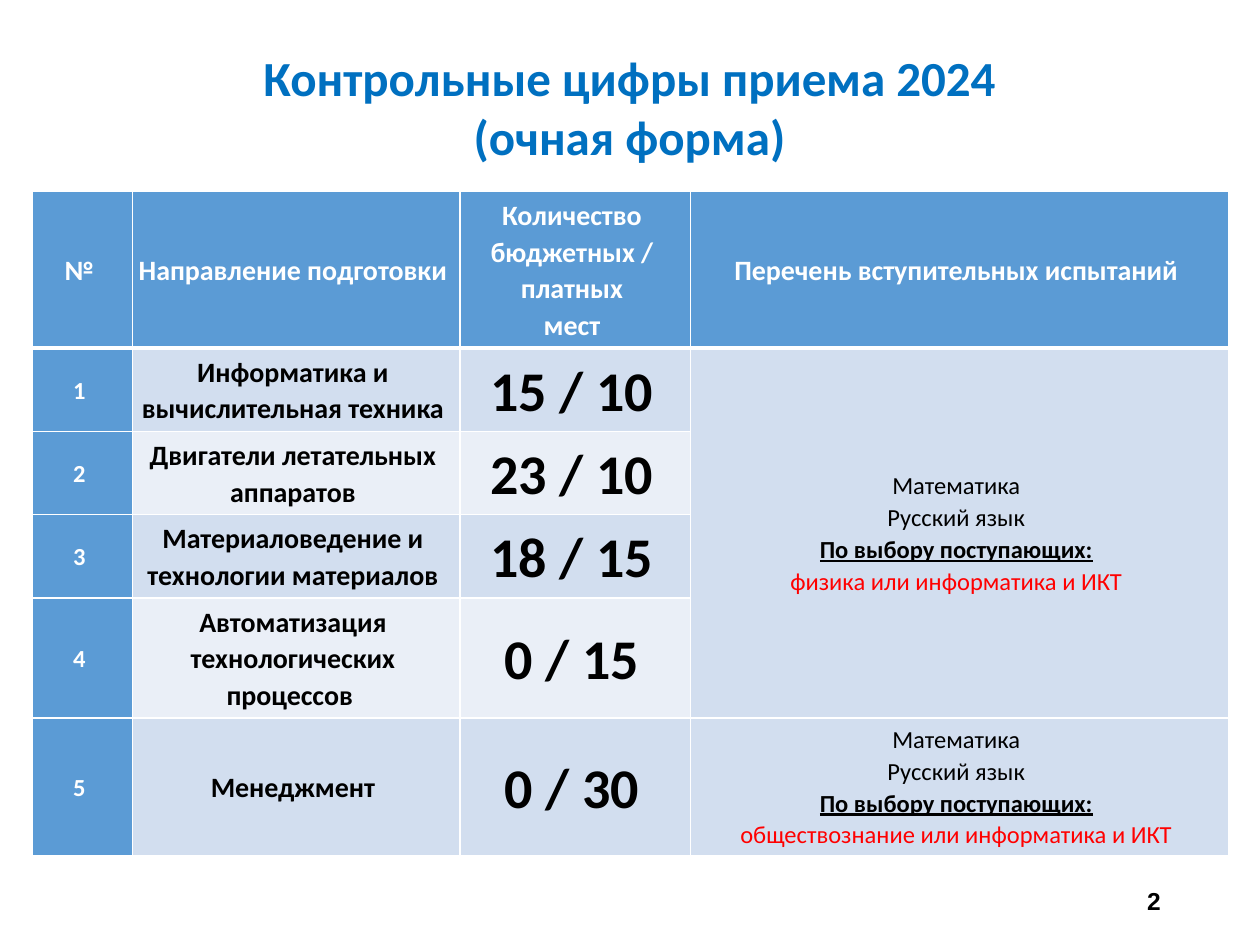
from dataclasses import dataclass

from lxml import etree
from pptx import Presentation
from pptx.dml.color import RGBColor
from pptx.enum import text
from pptx.oxml import ns
from pptx.util import Inches, Pt


@dataclass(frozen=True)
class Theme:
    font: str = "Calibri"
    number_font: str = "Arial"
    title: str = "0070C0"
    header: str = "5B9BD5"
    bands: tuple = ("D2DEEF", "EAEFF7")
    white: str = "FFFFFF"
    black: str = "000000"
    accent: str = "FF0000"
    title_size: int = 28
    label_size: int = 16
    small_size: int = 14
    seats_size: int = 32


THEME = Theme()
CENTER = text.PP_ALIGN.CENTER

COLUMNS = (0.79, 2.6, 1.83, 4.27)
ROWS = (1.21, 0.66, 0.65, 0.65, 0.94, 1.08)
HEADER = (
    ["№"],
    ["Направление подготовки"],
    ["Количество бюджетных / платных", "мест"],
    ["Перечень вступительных испытаний"],
)
PROGRAMMES = (
    ("Информатика и вычислительная техника", "15 / 10"),
    ("Двигатели летательных аппаратов", "23 / 10"),
    ("Материаловедение и технологии материалов", "18 / 15"),
    ("Автоматизация технологических процессов ", "0 / 15"),
    ("Менеджмент", "0 / 30"),
)
# (first row, last row, subjects to choose from)
EXAMS = (
    (1, 4, "физика или информатика и ИКТ"),
    (5, 5, "обществознание или информатика и ИКТ"),
)


def add_run(p, words, size, color, bold=True, underline=False, font=THEME.font):
    r = p.add_run()
    r.text = words
    r.font.name = font
    r.font.size = Pt(size)
    r.font.bold = bold
    r.font.underline = underline
    r.font.color.rgb = RGBColor.from_string(color)


def paragraphs(tf, count):
    """Yield count paragraphs, starting with the one already there."""
    for i in range(count):
        yield tf.add_paragraph() if i else tf.paragraphs[0]


def add_title(slide, left, top, width, height):
    sp = slide.shapes.title
    sp.left, sp.top, sp.width, sp.height = left, top, width, height
    tf = sp.text_frame
    tf.auto_size = text.MSO_AUTO_SIZE.NONE
    tf.vertical_anchor = text.MSO_ANCHOR.TOP
    lines = ("Контрольные цифры приема 2024", "(очная форма)")
    for p, line in zip(paragraphs(tf, len(lines)), lines):
        p.alignment = CENTER
        add_run(p, line, THEME.title_size, THEME.title)


def set_borders(cell, bottom):
    tc_pr = cell._tc.get_or_add_tcPr()
    for side, width in (("L", 1), ("R", 1), ("T", 1), ("B", bottom)):
        ln = etree.SubElement(tc_pr, ns.qn(f"a:ln{side}"), w=str(Pt(width)))
        fill = etree.SubElement(ln, ns.qn("a:solidFill"))
        etree.SubElement(fill, ns.qn("a:srgbClr"), val=THEME.white)


def format_cell(cell, fill, bottom=1):
    set_borders(cell, bottom)
    cell.fill.solid()
    cell.fill.fore_color.rgb = RGBColor.from_string(fill)
    cell.vertical_anchor = text.MSO_ANCHOR.MIDDLE
    cell.margin_left, cell.margin_right = Inches(0.05), Inches(0.1)
    cell.margin_top = cell.margin_bottom = Inches(0.04)


def fill_cell(cell, lines, size, color):
    tf = cell.text_frame
    for p, line in zip(paragraphs(tf, len(lines)), lines):
        p.alignment = CENTER
        p.line_spacing = 1.07
        add_run(p, line, size, color)


def fill_exams(cell, choice):
    lines = (
        ("Математика", THEME.black, False),
        ("Русский язык", THEME.black, False),
        ("По выбору поступающих:", THEME.black, True),
        (choice, THEME.accent, False),
    )
    for p, (line, color, strong) in zip(paragraphs(cell.text_frame, len(lines)), lines):
        p.alignment = CENTER
        p.line_spacing = 1.07
        p_pr = p._p.get_or_add_pPr()
        p_pr.set("marL", str(Inches(0.38)))
        p_pr.set("indent", str(Inches(-0.38)))
        add_run(p, line, THEME.small_size, color, bold=strong, underline=strong)


def add_admission_table(slide, left, top, width, height):
    table = slide.shapes.add_table(len(ROWS), len(COLUMNS), left, top, width, height).table
    for column, share in zip(table.columns, COLUMNS):
        column.width = int(width * share / sum(COLUMNS))
    for row, share in zip(table.rows, ROWS):
        row.height = int(height * share / sum(ROWS))

    for c, lines in enumerate(HEADER):
        format_cell(table.cell(0, c), THEME.header, bottom=3)
        fill_cell(table.cell(0, c), lines, THEME.label_size, THEME.white)

    for n, (programme, seats) in enumerate(PROGRAMMES, start=1):
        band = THEME.bands[(n - 1) % 2]
        for c in range(len(COLUMNS)):
            format_cell(table.cell(n, c), band if c else THEME.header)
        fill_cell(table.cell(n, 0), [str(n)], THEME.small_size, THEME.white)
        fill_cell(table.cell(n, 1), [programme], THEME.label_size, THEME.black)
        fill_cell(table.cell(n, 2), [seats], THEME.seats_size, THEME.black)

    for first, last, choice in EXAMS:
        if last > first:
            table.cell(first, 3).merge(table.cell(last, 3))
        fill_exams(table.cell(first, 3), choice)


def add_page_number(slide, left, top, width, height):
    tf = slide.shapes.add_textbox(left, top, width, height).text_frame
    tf.word_wrap = True
    tf.vertical_anchor = text.MSO_ANCHOR.MIDDLE
    p = tf.paragraphs[0]
    p.alignment = text.PP_ALIGN.RIGHT
    add_run(p, "2", THEME.small_size, THEME.black, font=THEME.number_font)


def main():
    prs = Presentation()
    prs.slide_width, prs.slide_height = Inches(10), Inches(7.5)
    slide = prs.slides.add_slide(prs.slide_layouts.get_by_name("Title Only"))
    add_title(slide, Inches(1.96), Inches(0.33), Inches(6.07), Inches(1.04))
    add_admission_table(slide, Inches(0.26), Inches(1.52), Inches(9.49), Inches(5.19))
    add_page_number(slide, Inches(7.06), Inches(6.95), Inches(2.25), Inches(0.4))
    prs.save("out.pptx")


if __name__ == "__main__":
    main()
